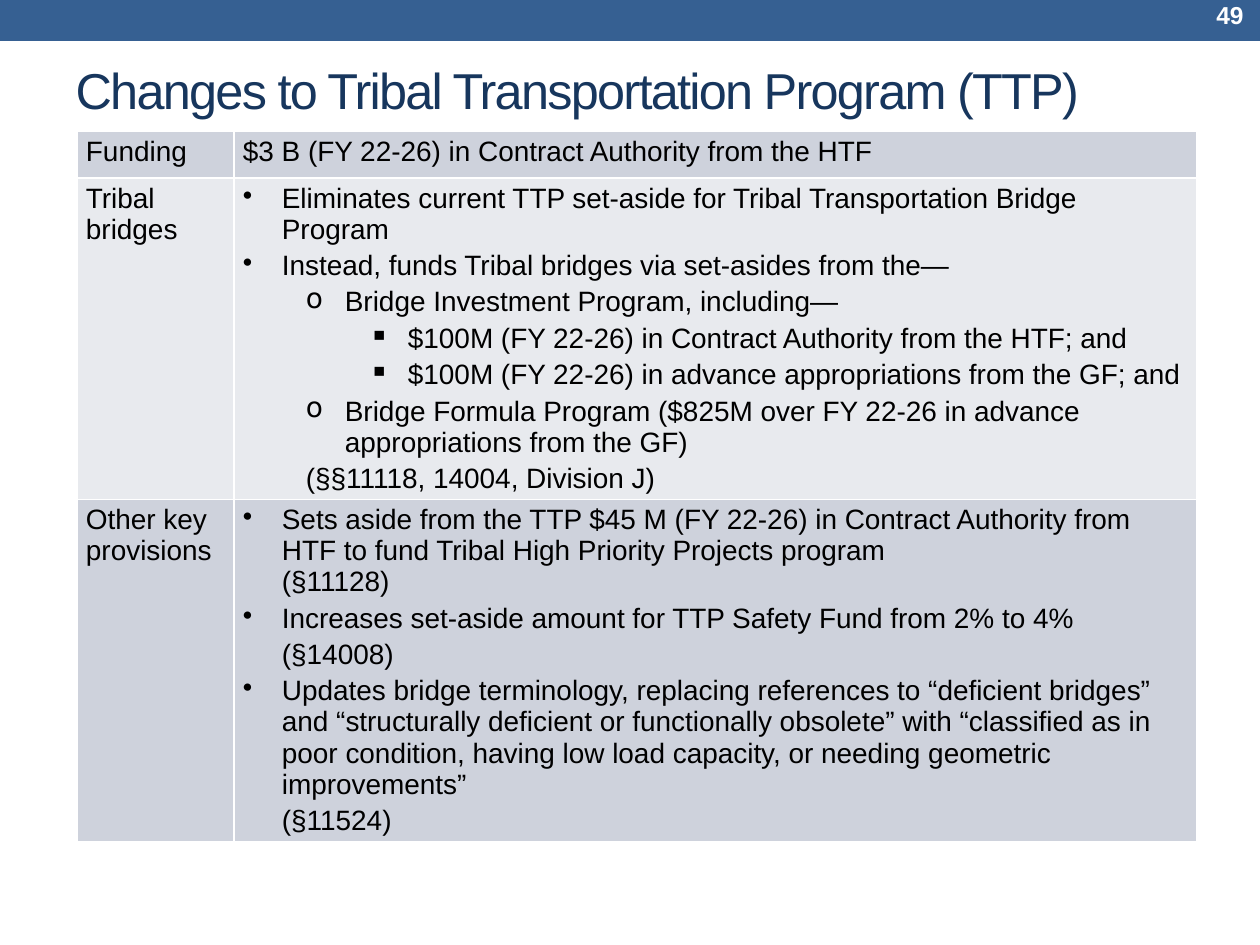
import pptx
import pptx.util
import pptx.dml.color
import pptx.enum.shapes
import pptx.enum.text
import pptx.oxml
import lxml.etree

RGB = pptx.dml.color.RGBColor
Pt = pptx.util.Pt
Align = pptx.enum.text.PP_ALIGN
Anchor = pptx.enum.text.MSO_ANCHOR
BLUE, NAVY = RGB(0x36, 0x60, 0x92), RGB(0x17, 0x36, 0x5D)
BAND_DARK, BAND_LIGHT = RGB(0xCE, 0xD2, 0xDC), RGB(0xE8, 0xEA, 0xEE)
BLACK, WHITE = RGB(0, 0, 0), RGB(0xFF, 0xFF, 0xFF)
FONT = "Arial"
SCALE = 914400 // 126

TITLE = "Changes to Tribal Transportation Program (TTP)"
PAGE = "49"
# -
ROWS = [
    ("Funding", 47, 9, [(0, "", "$3 B (FY 22-26) in Contract Authority from the HTF")]),
    ("Tribal bridges", 320, 3, [
        (39, "•", "Eliminates current TTP set‐aside for Tribal Transportation Bridge Program"),
        (39, "•", "Instead, funds Tribal bridges via set-asides from the—"),
        (102, "o", "Bridge Investment Program, including—"),
        (165, "▪", "$100M (FY 22-26) in Contract Authority from the HTF; and"),
        (165, "▪", "$100M (FY 22-26) in advance appropriations from the GF; and"),
        (102, "o", "Bridge Formula Program ($825M over FY 22-26 in advance appropriations from the GF)"),
        (63, "", "(§§11118, 14004, Division J)"),
    ]),
    ("Other key provisions", 342, 3, [
        (39, "•", "Sets aside from the TTP $45 M (FY 22-26) in Contract Authority from HTF "
                  "to fund Tribal High Priority Projects program\n(§11128)"),
        (39, "•", "Increases set‐aside amount for TTP Safety Fund from 2% to 4%"),
        (39, "", "(§14008)"),
        (39, "•", "Updates bridge terminology, replacing references to “deficient bridges” and "
                  "“structurally deficient or functionally obsolete” with “classified as in poor "
                  "condition, having low load capacity, or needing geometric improvements”"),
        (39, "", "(§11524)"),
    ]),
]
COLUMNS = [157, 963]
HANG = 39


def px(n):
    return n * SCALE


def box(*lengths):
    return [px(n) for n in lengths]


def style(p, size, color, bold=False, align=Align.LEFT):
    p.alignment = align
    p.font.name, p.font.size, p.font.bold = FONT, Pt(size), bold
    p.font.color.rgb = color


def child(parent, tag, **attributes):
    return lxml.etree.SubElement(parent, pptx.oxml.ns.qn(tag), attributes)


def indent(p, left, bullet):
    pPr = p._p.get_or_add_pPr()
    pPr.set("marL", str(px(left)))
    pPr.set("indent", str(px(-HANG if bullet else 0)))
    mark = pptx.oxml.ns.qn("a:buChar" if bullet else "a:buNone")
    bu = lxml.etree.Element(mark, {"char": bullet} if bullet else {})
    pPr.find(pptx.oxml.ns.qn("a:defRPr")).addprevious(bu)


def fill_cell(cell, color, paragraphs, after):
    cell.margin_left = cell.margin_right = px(9)
    cell.margin_top = cell.margin_bottom = px(5)
    tcPr = cell._tc.get_or_add_tcPr()
    for side in "LRTB":
        ln = child(tcPr, f"a:ln{side}", w=str(Pt(1)))
        child(child(ln, "a:solidFill"), "a:srgbClr", val=str(WHITE))
    cell.fill.solid()
    cell.fill.fore_color.rgb = color
    tf = cell.text_frame
    for i, (left, bullet, text) in enumerate(paragraphs):
        p = tf.add_paragraph() if i else tf.paragraphs[0]
        p.text = text
        style(p, 16, BLACK)
        p.space_after = Pt(after)
        indent(p, left, bullet)


prs = pptx.Presentation()
prs.slide_width, prs.slide_height = box(1260, 945)
s = prs.slides.add_slide(prs.slide_layouts[5])

bar = s.shapes.add_shape(pptx.enum.shapes.MSO_SHAPE.RECTANGLE, *box(0, -9, 1260, 50))
bar.shadow.inherit = False
bar.fill.solid()
bar.fill.fore_color.rgb = BLUE
bar.line.fill.background()

title = s.shapes.title
title.left, title.top, title.width, title.height = box(63, 28, 1134, 122)
title.text_frame.vertical_anchor = Anchor.MIDDLE
p = title.text_frame.paragraphs[0]
r = p.add_run()
r.text = TITLE
style(p, 28.8, NAVY)
r._r.get_or_add_rPr().set("spc", "-100")

frame = s.shapes.add_table(len(ROWS), 2, *box(77, 131, sum(COLUMNS), sum(row[1] for row in ROWS)))
table = frame.table
table.first_row = table.horz_banding = False
for column, width in zip(table.columns, COLUMNS):
    column.width = px(width)
for i, (label, height, after, paragraphs) in enumerate(ROWS):
    table.rows[i].height = px(height)
    color = BAND_LIGHT if i % 2 else BAND_DARK
    fill_cell(table.cell(i, 0), color, [(0, "", label)], 0)
    fill_cell(table.cell(i, 1), color, paragraphs, after)

number = s.shapes.add_textbox(*box(1109, -8, 147, 45))
tf = number.text_frame
tf.word_wrap = True
tf.vertical_anchor = Anchor.MIDDLE
p = tf.paragraphs[0]
p.text = PAGE
style(p, 14, WHITE, bold=True, align=Align.RIGHT)

prs.save("out.pptx")
